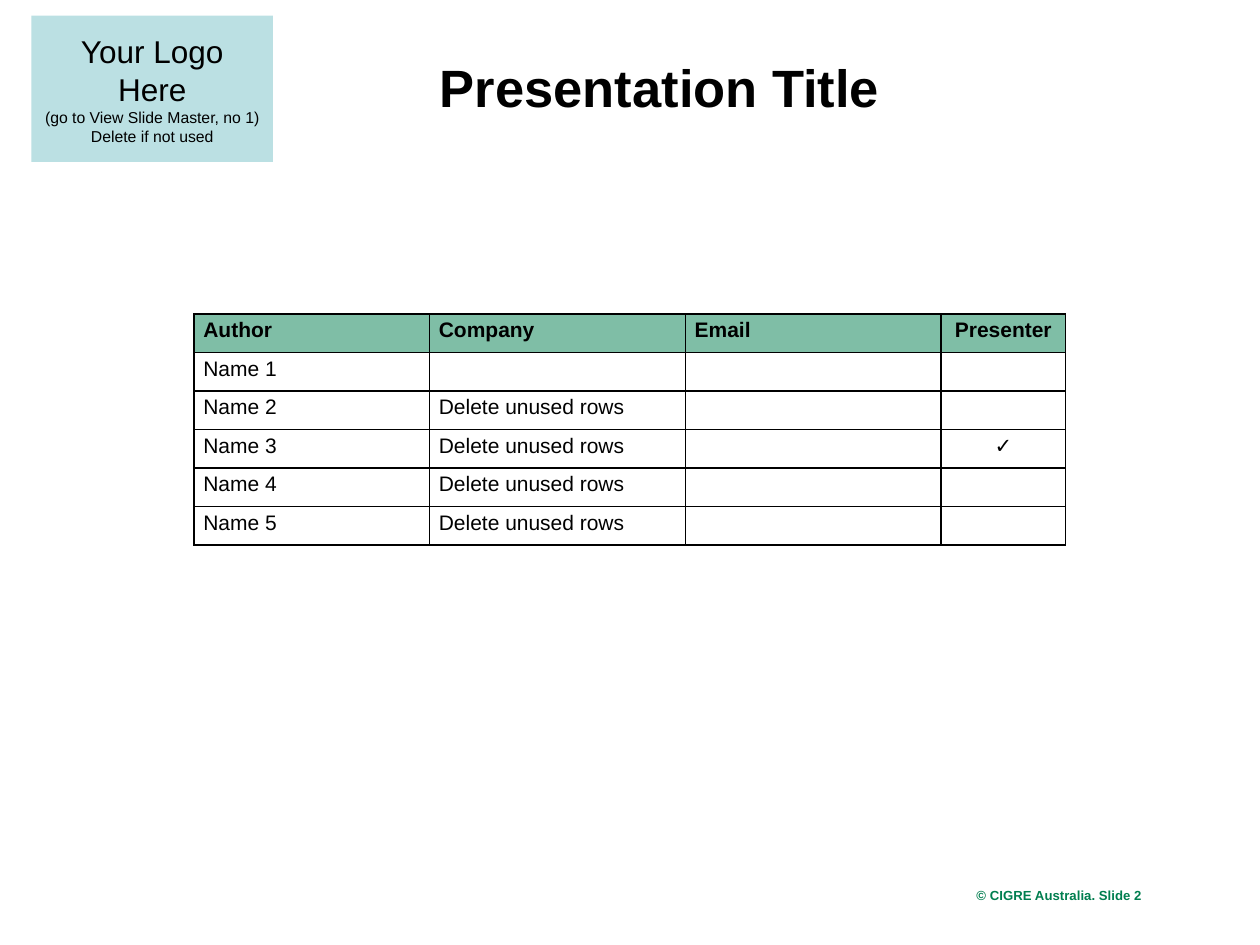
from lxml.etree import SubElement
from pptx import Presentation
from pptx.dml.color import RGBColor
from pptx.enum.shapes import MSO_SHAPE
from pptx.enum.text import MSO_ANCHOR, PP_ALIGN
from pptx.oxml import parse_xml
from pptx.oxml.ns import nsdecls, qn
from pptx.util import Pt

BLACK = RGBColor(0x00, 0x00, 0x00)
WHITE = RGBColor(0xFF, 0xFF, 0xFF)
GREEN = RGBColor(0x00, 0x7E, 0x4F)
PALE_BLUE = RGBColor(0xBB, 0xE0, 0xE3)
FONT = "Arial"

TITLE = "Presentation Title"
LOGO_LINES = [
    ("Your Logo Here", 18),
    ("(go to View Slide Master, no 1)", 9),
    ("Delete if not used", 9),
]
FOOTER = "© CIGRE Australia. Slide"
SLIDE_NUMBER = "2"
AUTHORS = [
    ("Author", "Company", "Email", "Presenter"),
    ("Name 1", "", "", ""),
    ("Name 2", "Delete unused rows", "", ""),
    ("Name 3", "Delete unused rows", "", "✓"),
    ("Name 4", "Delete unused rows", "", ""),
    ("Name 5", "Delete unused rows", "", ""),
]
COLUMN_WIDTHS = [134.6, 146.2, 146.2, 71.2]
ROW_HEIGHT = 22
CELL_TEXT_SIZE = 12


def style(paragraph, size, color=BLACK, bold=False, align=PP_ALIGN.LEFT):
    paragraph.alignment = align
    font = paragraph.font
    font.name, font.size, font.bold = FONT, Pt(size), bold
    font.color.rgb = color


def add_rectangle(slide, left, top, width, height, fill):
    shape = slide.shapes.add_shape(
        MSO_SHAPE.RECTANGLE, Pt(left), Pt(top), Pt(width), Pt(height))
    shape.shadow.inherit = False
    shape.fill.solid()
    shape.fill.fore_color.rgb = fill
    shape.line.fill.background()
    return shape


def set_footer_text(shape, text, wrap):
    frame = shape.text_frame
    frame.margin_left = frame.margin_right = 0
    frame.margin_top = frame.margin_bottom = 0
    frame.vertical_anchor = MSO_ANCHOR.BOTTOM
    frame.word_wrap = wrap
    frame.text = text
    style(frame.paragraphs[0], 7.5, GREEN, bold=True)


def add_logo_box(slide):
    box = add_rectangle(slide, 18, 9, 138, 83.5, PALE_BLUE)
    frame = box.text_frame
    frame.word_wrap = True
    frame.vertical_anchor = MSO_ANCHOR.MIDDLE
    frame.text = "\n".join(text for text, _ in LOGO_LINES)
    for paragraph, (_, size) in zip(frame.paragraphs, LOGO_LINES):
        style(paragraph, size, align=PP_ALIGN.CENTER)


def add_title(slide):
    title = slide.shapes.title
    title.left, title.top, title.width, title.height = Pt(167), Pt(15), Pt(420), Pt(69)
    title.text_frame.text = TITLE
    title.text_frame.vertical_anchor = MSO_ANCHOR.MIDDLE
    style(title.text_frame.paragraphs[0], 30, bold=True, align=PP_ALIGN.CENTER)


def fill_half_green(cell):
    cell.fill.solid()
    cell.fill.fore_color.rgb = GREEN
    color = cell._tc.tcPr.find(f"{qn('a:solidFill')}/{qn('a:srgbClr')}")
    SubElement(color, qn("a:alpha"), val="50000")


def add_borders(cell):
    properties = cell._tc.get_or_add_tcPr()
    for index, side in enumerate(("lnL", "lnR", "lnT", "lnB")):
        properties.insert(index, parse_xml(
            f'<a:{side} {nsdecls("a")} w="{Pt(1)}"><a:solidFill>'
            f'<a:srgbClr val="{BLACK}"/></a:solidFill></a:{side}>'))


def add_author_table(slide):
    row_count, column_count = len(AUTHORS), len(COLUMN_WIDTHS)
    table = slide.shapes.add_table(
        row_count, column_count, Pt(110.8), Pt(179.4),
        Pt(sum(COLUMN_WIDTHS)), Pt(ROW_HEIGHT * row_count)).table
    for column, width in zip(table.columns, COLUMN_WIDTHS):
        column.width = Pt(width)
    for row_index, values in enumerate(AUTHORS):
        table.rows[row_index].height = Pt(ROW_HEIGHT)
        is_header = row_index == 0
        for column_index, value in enumerate(values):
            cell = table.cell(row_index, column_index)
            cell.margin_left = cell.margin_right = Pt(5.4)
            cell.margin_top = cell.margin_bottom = Pt(2.7)
            if is_header:
                fill_half_green(cell)
            else:
                cell.fill.background()
            add_borders(cell)
            cell.text = value
            paragraph = cell.text_frame.paragraphs[0]
            is_last = column_index == column_count - 1
            style(paragraph, CELL_TEXT_SIZE, bold=is_header,
                  align=PP_ALIGN.CENTER if is_last else PP_ALIGN.LEFT)
            if not value:  # keeps the empty row from growing to the default size
                SubElement(paragraph._p, qn("a:endParaRPr"), sz=str(CELL_TEXT_SIZE * 100))


def main():
    presentation = Presentation()
    presentation.slide_width, presentation.slide_height = Pt(720), Pt(540)
    slide = presentation.slides.add_slide(presentation.slide_layouts[5])
    footer = add_rectangle(slide, 558, 498.2, 128, 18, WHITE)
    set_footer_text(footer, FOOTER, wrap=False)
    add_logo_box(slide)
    add_title(slide)
    add_author_table(slide)
    number = slide.shapes.add_textbox(Pt(648), Pt(507), Pt(13.7), Pt(9.2))
    set_footer_text(number, SLIDE_NUMBER, wrap=True)
    presentation.save("out.pptx")


if __name__ == "__main__":
    main()
